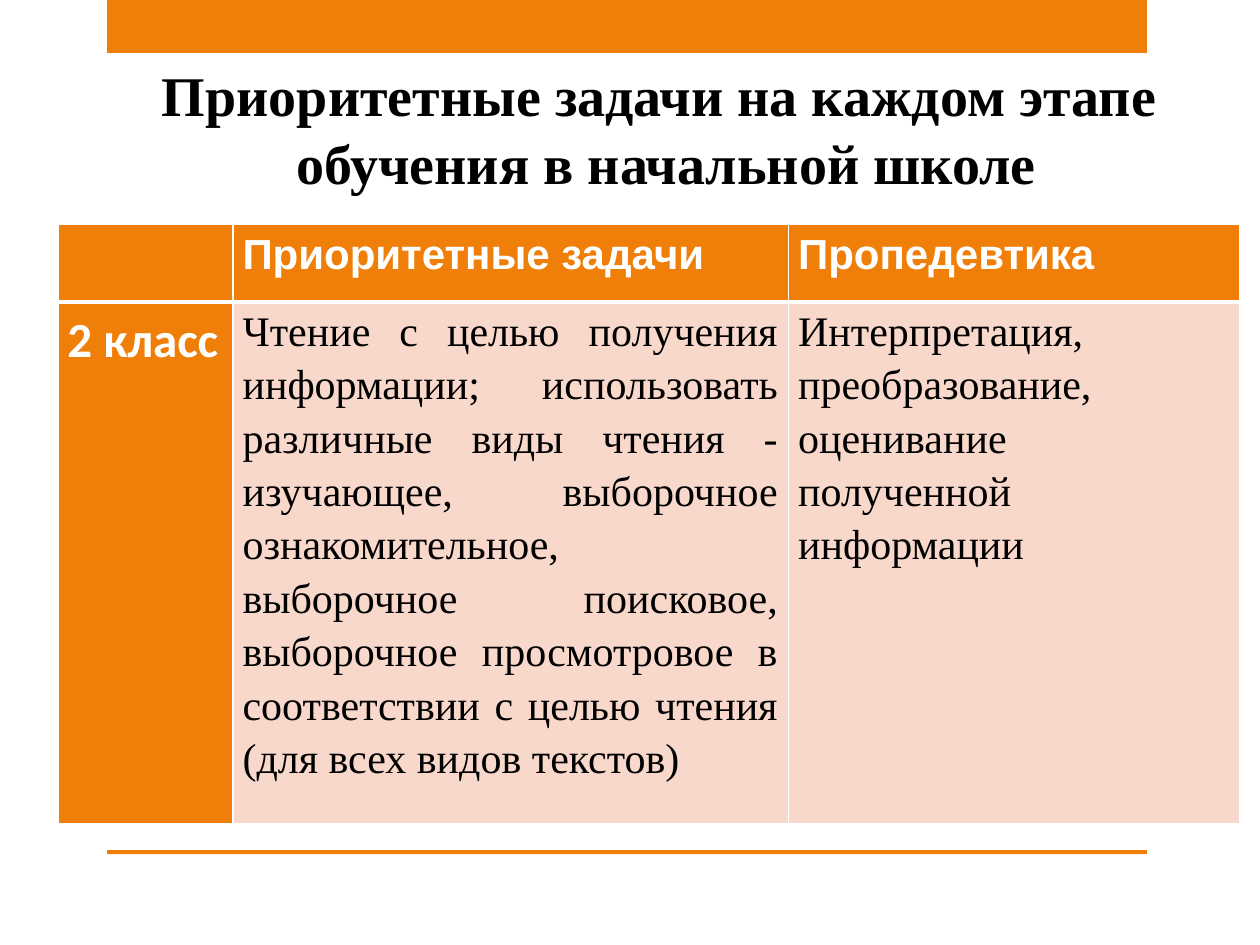
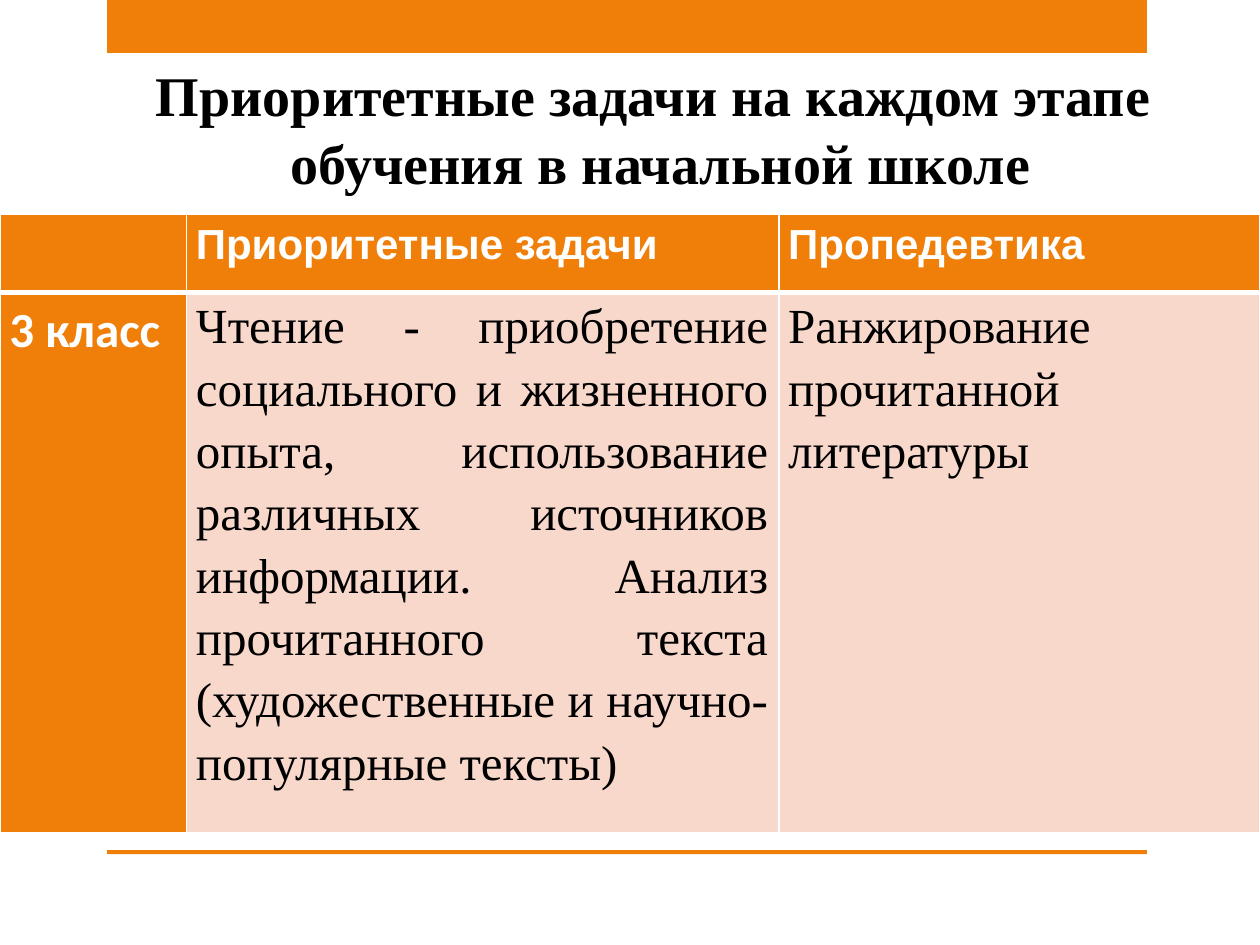
from lxml.etree import SubElement
from pptx import Presentation
from pptx.dml.color import RGBColor as RGB
from pptx.enum.shapes import MSO_SHAPE as Shape
from pptx.enum.text import MSO_ANCHOR as Anchor, MSO_AUTO_SIZE as AutoSize, PP_ALIGN as Align
from pptx.oxml.ns import qn
from pptx.util import Cm, Pt

COLORS = {"accent": "F07F09", "pale": "F9D8CC", "white": "FFFFFF", "black": "000000"}
SERIF = "Times New Roman"
TITLE_LINES = ["Приоритетные задачи на каждом этапе", " обучения в начальной школе"]
HEADINGS = ["", "Приоритетные задачи", "Пропедевтика"]
BANDS = [(0, 1.07), (17.14, 0.08)]  # top, height
HEADER_HEIGHT = 1.57

GRADES = [
    {
        "title": (1.19, 24.21), "table": (1.17, 4.52),
        "columns": [3.53, 11.2, 9.09], "body_height": 10.52, "body_size": 24,
        "texts": [
            "2 класс",
            "Чтение с целью получения информации; использовать различные виды чтения - "
            "изучающее, выборочное ознакомительное, выборочное поисковое, выборочное "
            "просмотровое в соответствии с целью чтения (для всех видов текстов)",
            "Интерпретация, преобразование, оценивание полученной информации",
        ],
    },
    {
        "title": (0.97, 24.41), "table": (0, 4.32),
        "columns": [3.76, 11.94, 9.7], "body_height": 10.9, "body_size": 28,
        "texts": [
            "3 класс",
            "Чтение - приобретение социального и жизненного опыта, использование "
            "различных источников информации. Анализ прочитанного текста "
            "(художественные и научно-популярные тексты)",
            "Ранжирование прочитанной литературы",
        ],
    },
]


def add_text(paragraph, text, size, font, color, bold):
    run = paragraph.add_run()
    run.text = text
    run.font.size = Pt(size)
    run.font.name = font
    run.font.bold = bold
    run.font.color.rgb = RGB.from_string(COLORS[color])


def add_borders(cell, widths):
    """Draw white cell borders; widths maps a side (L, R, T, B) to points."""
    properties = cell._tc.get_or_add_tcPr()
    for side, width in widths.items():
        line = SubElement(properties, qn(f"a:ln{side}"), w=str(Pt(width)))
        fill = SubElement(line, qn("a:solidFill"))
        SubElement(fill, qn("a:srgbClr"), val=COLORS["white"])


prs = Presentation()
prs.slide_width, prs.slide_height = Cm(25.4), Cm(19.05)
title_only = prs.slide_layouts[5]

for grade in GRADES:
    slide = prs.slides.add_slide(title_only)

    for top, height in BANDS:
        band = slide.shapes.add_shape(Shape.RECTANGLE, Cm(2.16), Cm(top), Cm(20.96), Cm(height))
        band.shadow.inherit = False
        band.fill.solid()
        band.fill.fore_color.rgb = RGB.from_string(COLORS["accent"])
        band.line.fill.background()

    title = slide.shapes.title
    left, width = grade["title"]
    title.left, title.top, title.width, title.height = Cm(left), Cm(1.12), Cm(width), Cm(3)
    frame = title.text_frame
    frame.auto_size = AutoSize.NONE
    frame.vertical_anchor = Anchor.TOP
    frame.margin_top = Cm(0.07)
    for index, line_text in enumerate(TITLE_LINES):
        paragraph = frame.add_paragraph() if index else frame.paragraphs[0]
        paragraph.alignment = Align.CENTER
        paragraph.line_spacing = Pt(39)
        add_text(paragraph, line_text, 32, SERIF, "black", True)

    left, top = grade["table"]
    table = slide.shapes.add_table(
        2, 3, Cm(left), Cm(top), Cm(sum(grade["columns"])),
        Cm(HEADER_HEIGHT + grade["body_height"])).table
    table.first_col = True
    table.horz_banding = False
    for column, width in zip(table.columns, grade["columns"]):
        column.width = Cm(width)
    for row, height in zip(table.rows, (HEADER_HEIGHT, grade["body_height"])):
        row.height = Cm(height)

    for r, texts in enumerate((HEADINGS, grade["texts"])):
        for c, text in enumerate(texts):
            cell = table.cell(r, c)
            is_body = r == 1 and c > 0
            add_borders(cell, {"L": 1, "R": 1, "T": 3 if r else 1, "B": 1 if r else 3})
            cell.fill.solid()
            cell.fill.fore_color.rgb = RGB.from_string(COLORS["pale" if is_body else "accent"])
            cell.margin_left, cell.margin_right = Cm(0.19), Cm(0.22)
            cell.margin_top = cell.margin_bottom = 0
            if not text:
                continue
            if is_body:
                style = (grade["body_size"], SERIF, "black", False)
            elif r:
                style = (28, "Calibri", "white", True)
            else:
                style = (24, "Arial", "white", True)
            paragraph = cell.text_frame.paragraphs[0]
            paragraph.alignment = Align.JUSTIFY
            paragraph.line_spacing = 1.15
            add_text(paragraph, text, *style)

prs.save("out.pptx")
